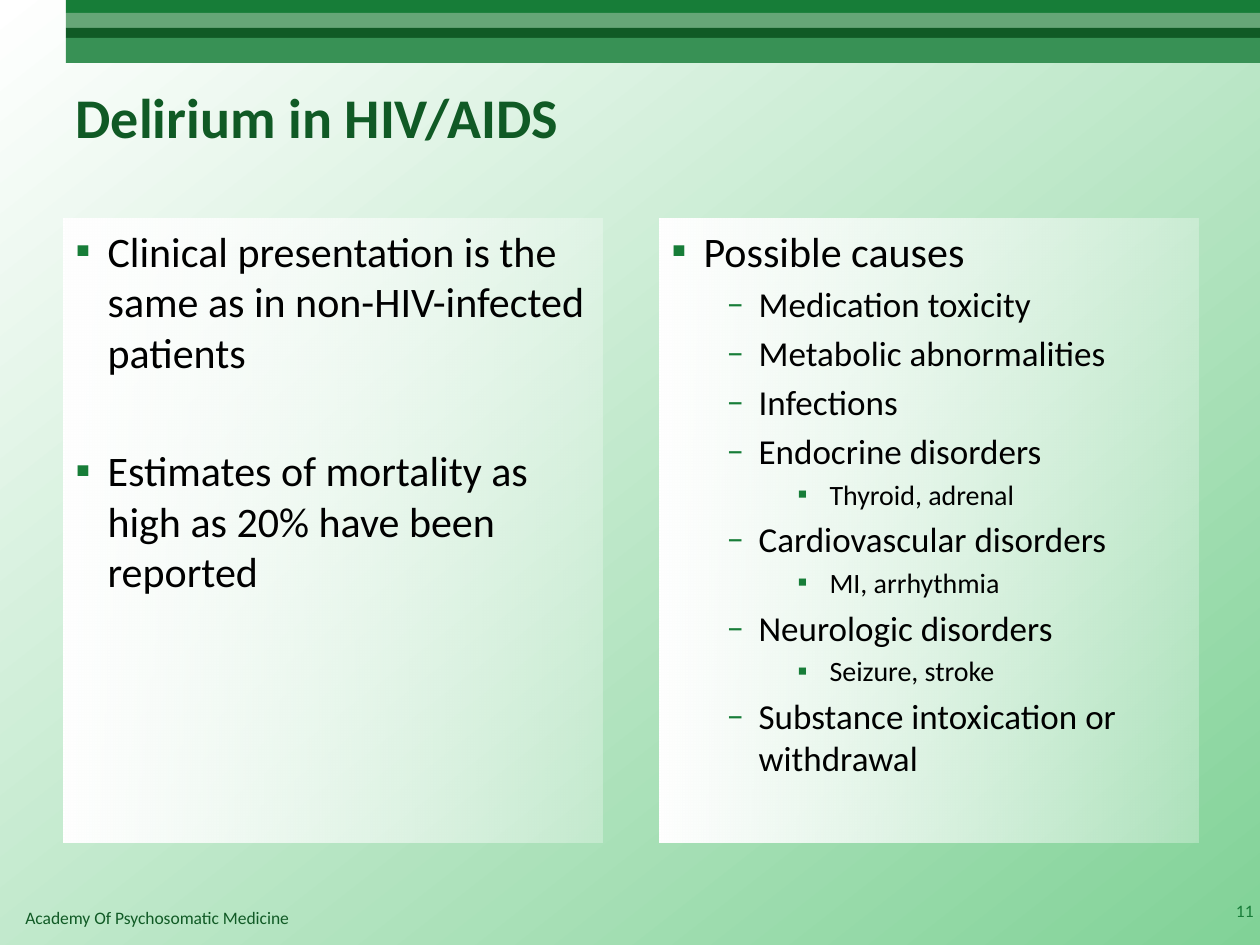
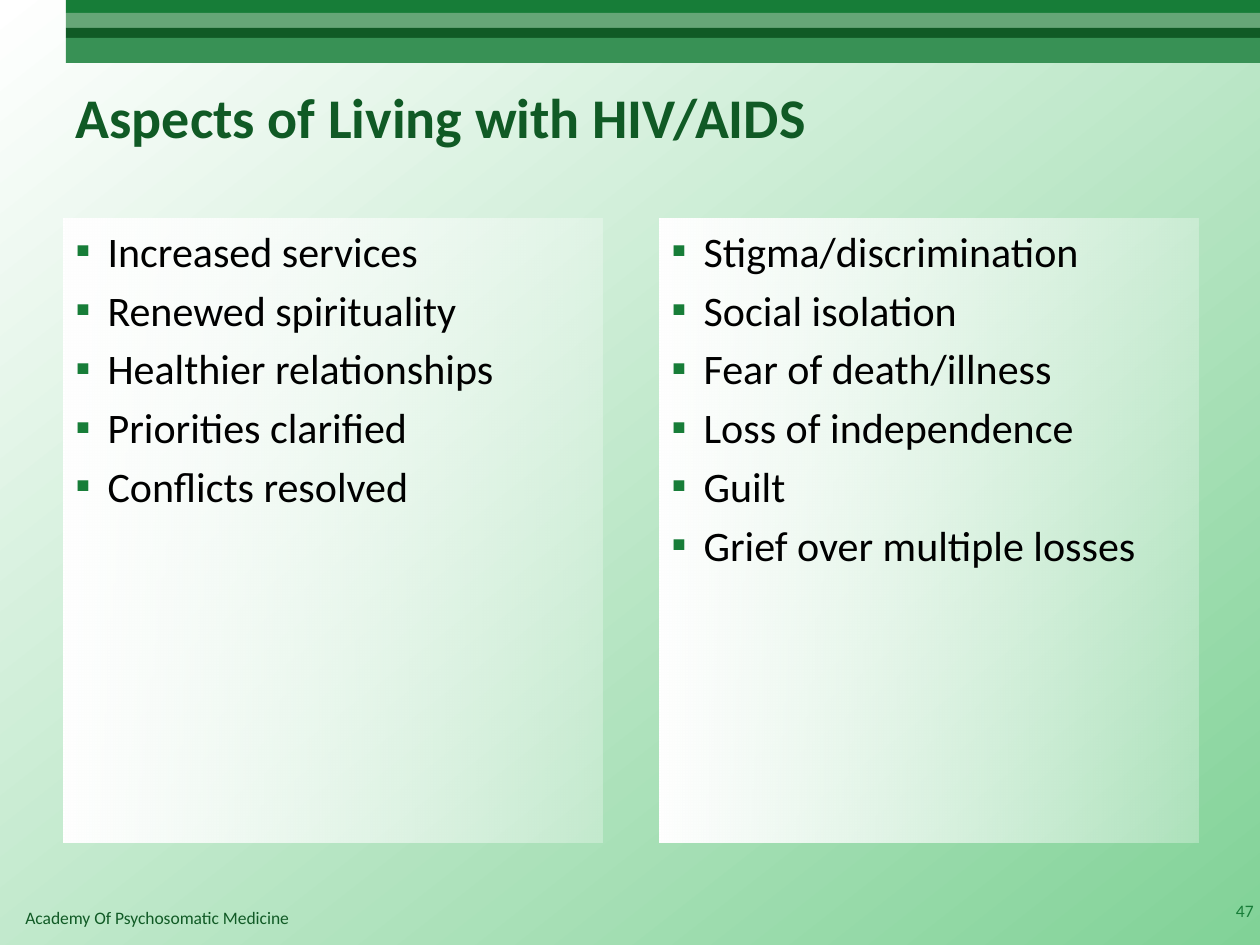
from dataclasses import dataclass
from itertools import pairwise

from lxml.etree import SubElement
from pptx import Presentation
from pptx.dml.color import RGBColor
from pptx.enum.shapes import MSO_SHAPE
from pptx.enum.text import MSO_ANCHOR, MSO_AUTO_SIZE, PP_ALIGN
from pptx.oxml.ns import qn
from pptx.util import Emu, Pt

SLIDE_WIDTH, SLIDE_HEIGHT = 1260, 945


@dataclass(frozen=True)
class Theme:
    font: str = "Calibri"
    dark: str = "105A25"
    accent: str = "177D38"
    text: str = "000000"
    white: str = "FFFFFF"
    backdrop: str = "81D297"
    bands: tuple = ("177D38", "66A677", "105A25", "389155")
    title_size: int = 32
    small_size: int = 10
    level_sizes: tuple = (24, 20, 16)
    level_indents: tuple = (32, 87, 158)
    level_bullets: tuple = ("▪", "–", "▪")
    hanging: int = 32
    paragraph_gap: float = 0.2  # share of the type size
    wide_gap: int = 39  # points
    panel_end_opacity: int = 30  # percent


THEME = Theme()

# Boxes: left, top, width, height in px
TITLE_BOX = (63, 38, 1134, 157)
PANEL_BOXES = [(left, 219, 539, 624) for left in (63, 659)]
FOOTER_BOX = (13, 901, 875, 34)
NUMBER_BOX = (1216, 886, 50, 50)
BAND_LEFT = 66
BAND_EDGES = (0, 13, 28, 38, 63)


def px(length):
    return Emu(round(length * 914400 / 126))


def rgb(color):
    return RGBColor.from_string(color)


def place(shape, box):
    shape.left, shape.top, shape.width, shape.height = map(px, box)


def add_run(paragraph, text, size, color, bold=False):
    run = paragraph.add_run()
    run.text = text
    run.font.name = THEME.font
    run.font.size = Pt(size)
    run.font.bold = bold
    run.font.color.rgb = rgb(color)


def set_gradient(fill, start, end, angle):
    fill.gradient()
    fill.gradient_angle = angle
    for stop, color in zip(fill.gradient_stops, (start, end)):
        stop.color.rgb = rgb(color)


def set_bullet(paragraph, level):
    properties = paragraph._p.get_or_add_pPr()
    properties.set("marL", str(px(THEME.level_indents[level])))
    properties.set("indent", str(-px(THEME.hanging)))
    color = SubElement(properties, qn("a:buClr"))
    SubElement(color, qn("a:srgbClr"), val=THEME.accent)
    SubElement(properties, qn("a:buFont"), typeface=THEME.font)
    SubElement(properties, qn("a:buChar"), char=THEME.level_bullets[level])


# Stacked stripes along the top edge
def add_bands(slide):
    for (top, bottom), color in zip(pairwise(BAND_EDGES), THEME.bands):
        band = slide.shapes.add_shape(MSO_SHAPE.RECTANGLE, 0, 0, 0, 0)
        place(band, (BAND_LEFT, top, SLIDE_WIDTH - BAND_LEFT, bottom - top))
        band.shadow.inherit = False
        band.fill.solid()
        band.fill.fore_color.rgb = rgb(color)
        band.line.fill.background()


def fill_title(shape, text):
    place(shape, TITLE_BOX)
    frame = shape.text_frame
    frame.auto_size = MSO_AUTO_SIZE.NONE
    frame.vertical_anchor = MSO_ANCHOR.MIDDLE
    paragraph = frame.paragraphs[0]
    paragraph.alignment = PP_ALIGN.LEFT
    add_run(paragraph, text, THEME.title_size, THEME.dark, bold=True)


# White panel fading to the right, with a bulleted list
def fill_panel(shape, box, items, wide):
    place(shape, box)
    set_gradient(shape.fill, THEME.white, THEME.white, 0)
    *_, end_color = shape.element.spPr.iter(qn("a:srgbClr"))
    SubElement(end_color, qn("a:alpha"), val=str(THEME.panel_end_opacity * 1000))

    frame = shape.text_frame
    frame.auto_size = MSO_AUTO_SIZE.NONE
    frame.word_wrap = True
    for index, (level, text) in enumerate(items):
        paragraph = frame.add_paragraph() if index else frame.paragraphs[0]
        size = THEME.level_sizes[level]
        gap = THEME.wide_gap if wide else size * THEME.paragraph_gap
        paragraph.level = level
        set_bullet(paragraph, level)
        paragraph.space_before = Pt(gap if index else 0)
        add_run(paragraph, text, size, THEME.text)


def add_label(slide, box, text, color, alignment, anchor):
    label = slide.shapes.add_textbox(0, 0, 0, 0)
    place(label, box)
    frame = label.text_frame
    frame.word_wrap = True
    frame.vertical_anchor = anchor
    paragraph = frame.paragraphs[0]
    paragraph.alignment = alignment
    add_run(paragraph, text, THEME.small_size, color)


def add_two_column_slide(presentation, title, number, columns, wide_columns=()):
    slide = presentation.slides.add_slide(presentation.slide_layouts[3])
    add_bands(slide)
    fill_title(slide.shapes.title, title)
    for index, (box, items) in enumerate(zip(PANEL_BOXES, columns)):
        panel = slide.placeholders[index + 1]
        fill_panel(panel, box, items, index in wide_columns)
    add_label(slide, FOOTER_BOX, "Academy Of Psychosomatic Medicine",
              THEME.dark, PP_ALIGN.LEFT, MSO_ANCHOR.TOP)
    add_label(slide, NUMBER_BOX, number,
              THEME.accent, PP_ALIGN.RIGHT, MSO_ANCHOR.MIDDLE)


def top_level(*texts):
    return [(0, text) for text in texts]


def main():
    presentation = Presentation()
    presentation.slide_width = px(SLIDE_WIDTH)
    presentation.slide_height = px(SLIDE_HEIGHT)
    set_gradient(presentation.slide_master.background.fill,
                 THEME.white, THEME.backdrop, 308)

    add_two_column_slide(
        presentation, "Delirium in HIV/AIDS", "11",
        [
            top_level(
                "Clinical presentation is the same as in non-HIV-infected patients",
                "Estimates of mortality as high as 20% have been reported",
            ),
            [
                (0, "Possible causes"),
                (1, "Medication toxicity"),
                (1, "Metabolic abnormalities"),
                (1, "Infections"),
                (1, "Endocrine disorders"),
                (2, "Thyroid, adrenal"),
                (1, "Cardiovascular disorders"),
                (2, "MI, arrhythmia"),
                (1, "Neurologic disorders"),
                (2, "Seizure, stroke"),
                (1, "Substance intoxication or withdrawal"),
            ],
        ],
        wide_columns=(0,),
    )
    add_two_column_slide(
        presentation, "Aspects of Living with HIV/AIDS", "47",
        [
            top_level("Increased services", "Renewed spirituality",
                      "Healthier relationships", "Priorities clarified",
                      "Conflicts resolved"),
            top_level("Stigma/discrimination", "Social isolation",
                      "Fear of death/illness", "Loss of independence",
                      "Guilt", "Grief over multiple losses"),
        ],
    )
    presentation.save("out.pptx")


if __name__ == "__main__":
    main()
